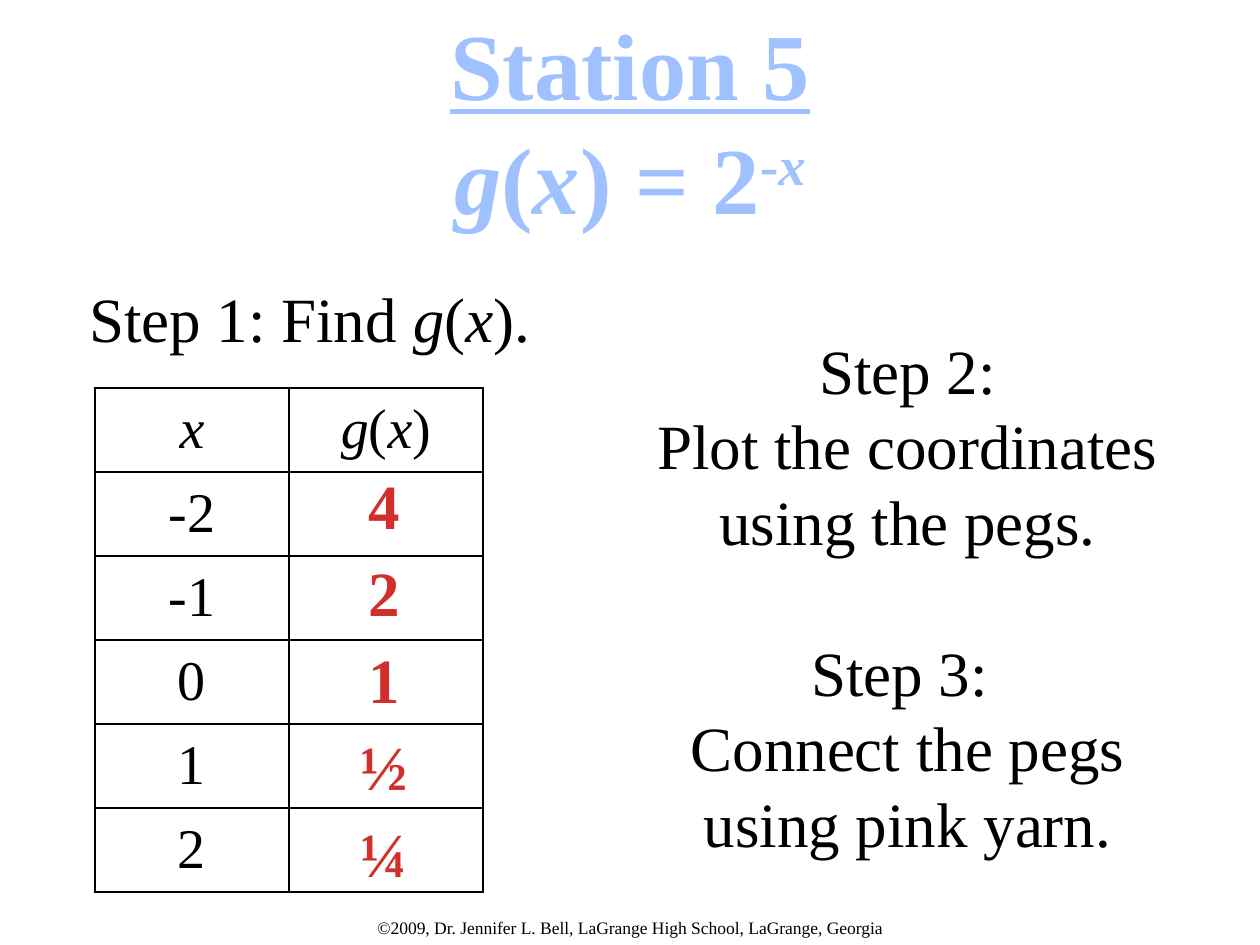
import pptx
import pptx.util
import pptx.dml.color
import pptx.enum.text
import pptx.oxml.ns
from lxml import etree

PX = 914400 / 126
FONT = "Times New Roman"
COLORS = {"title": "A0C1FF", "body": "000000", "answer": "D02F2C", "border": "000000"}

G_OF_X = [("g", "i"), ("(", ""), ("x", "i")]
HEADING = [
    [("Station 5", "bu")],
    [("g", "bi"), ("(", "b"), ("x", "bi"), (") = 2", "b"), ("-", "b^"), ("x", "bi^")],
]
STEP_ONE = [[("Step 1: Find ", "")] + G_OF_X + [(").", "")]]
LATER_STEPS = [
    [("Step 2:", "")],
    [("Plot the coordinates using the pegs.", "")],
    [("Step 3: ", "")],
    [("Connect the pegs using pink yarn.", "")],
]
TABLE_HEAD = [[("x", "i")], G_OF_X + [(")", "")]]
X_VALUES = ["-2", "-1", "0", "1", "2"]
ANSWERS = ["4", "2", "1", "½", "¼"]
CREDIT = [[("©2009, Dr. Jennifer L. Bell, LaGrange High School, LaGrange, Georgia", "")]]

TABLE_LEFT, TABLE_TOP, COLUMN_W, ROW_H = 95, 388, 194, 84
ANSWER_LEFT, ANSWER_TOP, ANSWER_W, ANSWER_H, ANSWER_STEP = 344, 460, 80, 89, 87


def emu(px):
    return pptx.util.Emu(round(px * PX))


def rgb(name):
    return pptx.dml.color.RGBColor.from_string(COLORS[name])


def write(frame, lines, size, color):
    for index, line in enumerate(lines):
        paragraph = frame.paragraphs[0] if index == 0 else frame.add_paragraph()
        paragraph.alignment = pptx.enum.text.PP_ALIGN.CENTER
        for text, style in line:
            run = paragraph.add_run()
            run.text = text
            font = run.font
            font.name, font.size = FONT, pptx.util.Pt(size)
            font.color.rgb = rgb(color)
            font.bold, font.italic, font.underline = "b" in style, "i" in style, "u" in style
            if "^" in style:
                run._r.get_or_add_rPr().set("baseline", "30000")


def add_text(slide, box, lines, size, color="body", wrap=True):
    frame = slide.shapes.add_textbox(*map(emu, box)).text_frame
    frame.word_wrap = wrap
    write(frame, lines, size, color)
    return frame


def add_borders(cell):
    properties = cell._tc.get_or_add_tcPr()
    for position, side in enumerate(("lnL", "lnR", "lnT", "lnB")):
        line = etree.Element(pptx.oxml.ns.qn("a:" + side), w=str(pptx.util.Pt(1)))
        fill = etree.SubElement(line, pptx.oxml.ns.qn("a:solidFill"))
        etree.SubElement(fill, pptx.oxml.ns.qn("a:srgbClr"), val=COLORS["border"])
        properties.insert(position, line)


def add_value_table(slide):
    rows = [TABLE_HEAD] + [[[(value, "")], []] for value in X_VALUES]
    box = (TABLE_LEFT, TABLE_TOP, 2 * COLUMN_W, ROW_H * len(rows))
    table = slide.shapes.add_table(len(rows), 2, *map(emu, box)).table
    table.first_row = table.horz_banding = False
    for column in table.columns:
        column.width = emu(COLUMN_W)
    for r, row in enumerate(rows):
        table.rows[r].height = emu(ROW_H)
        for c, line in enumerate(row):
            cell = table.cell(r, c)
            cell.fill.background()
            cell.vertical_anchor = pptx.enum.text.MSO_ANCHOR.MIDDLE
            write(cell.text_frame, [line], 32, "body")
            add_borders(cell)


def main():
    deck = pptx.Presentation()
    deck.slide_width, deck.slide_height = emu(1260), emu(945)
    slide = deck.slides.add_slide(deck.slide_layouts[5])

    title = slide.shapes.title
    title.left, title.top, title.width, title.height = map(emu, (431, 0, 398, 242))
    title.text_frame.word_wrap = False
    title.text_frame.auto_size = pptx.enum.text.MSO_AUTO_SIZE.NONE
    title.text_frame.vertical_anchor = pptx.enum.text.MSO_ANCHOR.TOP
    write(title.text_frame, HEADING, 54, "title")

    add_text(slide, (42, 273, 535, 89), STEP_ONE, 36)
    add_value_table(slide)
    steps = add_text(slide, (640, 325, 535, 547), LATER_STEPS, 36)
    steps.paragraphs[2].space_before = pptx.util.Pt(43)
    for index, answer in enumerate(ANSWERS):
        box = (ANSWER_LEFT, ANSWER_TOP + index * ANSWER_STEP, ANSWER_W, ANSWER_H)
        add_text(slide, box, [[(answer, "b")]], 36, "answer", wrap=False)
    add_text(slide, (0, 911, 1260, 34), CREDIT, 10)

    deck.save("out.pptx")


if __name__ == "__main__":
    main()
